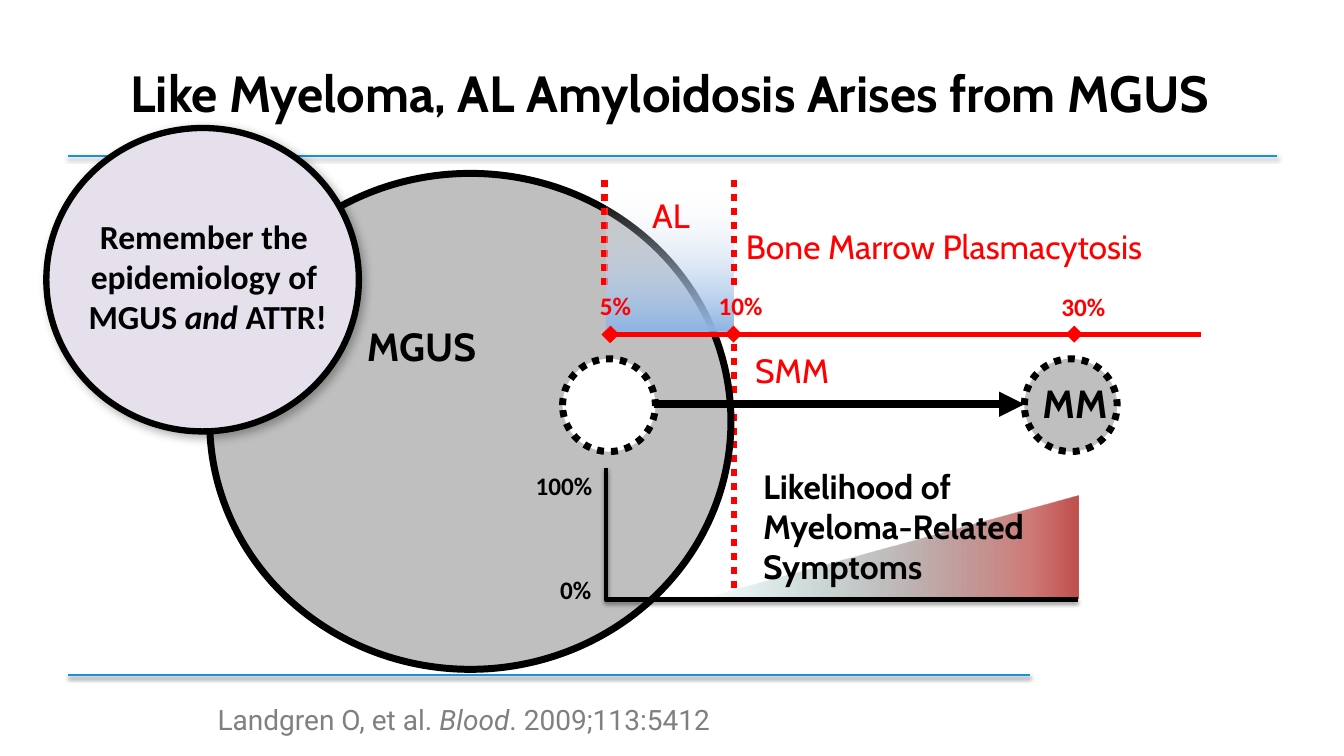
from dataclasses import dataclass
from typing import Optional

import pptx
import pptx.dml.color
import pptx.enum.dml
import pptx.enum.shapes
import pptx.enum.text
import pptx.oxml
import pptx.oxml.ns
import pptx.util

Inches, Pt = pptx.util.Inches, pptx.util.Pt
RGB = pptx.dml.color.RGBColor
Kind = pptx.enum.shapes.MSO_SHAPE
Align = pptx.enum.text.PP_ALIGN
Anchor = pptx.enum.text.MSO_ANCHOR
NS = pptx.oxml.ns.nsdecls("a")

BLACK = RGB(0, 0, 0)
WHITE = RGB(255, 255, 255)
RED = RGB(255, 0, 0)
GRAY = RGB(0xBF, 0xBF, 0xBF)
DIM = RGB(0x80, 0x80, 0x80)
BLUE = RGB(0x17, 0x92, 0xDD)
LILAC = RGB(0xE6, 0xE0, 0xEC)
TEAL = RGB(0, 0x80, 0x80)
BRICK = RGB(0xC0, 0x50, 0x4D)
PALE = RGB(0xF6, 0xF9, 0xFC)
SKY = RGB(0x8E, 0xB4, 0xE3)

HEAD = {"name": "Cabin", "size": Pt(28), "bold": True, "color": BLACK}
TITLE = HEAD | {"size": Pt(36.3)}
NOTE = HEAD | {"size": Pt(24)}
STAGE = NOTE | {"bold": False, "color": RED}
TICK = {"name": "Calibri", "size": Pt(18), "bold": True, "color": RED}
SCALE = TICK | {"color": BLACK}
CALL = SCALE | {"size": Pt(24)}
CITE = {"name": "Roboto", "size": Pt(20), "color": DIM}


@dataclass
class Shade:
    """Shadow: opacity in percent, blur and distance in points, angle."""
    alpha: int
    blur: float
    dist: float
    angle: int


@dataclass
class Line:
    x1: float
    y1: float
    x2: float
    y2: float
    color: RGB
    width: float
    dots: bool = False
    ends: tuple = ()
    shade: Optional[Shade] = None


@dataclass
class Form:
    kind: Kind
    x: float
    y: float
    w: float
    h: float
    fill: Optional[RGB] = None
    line: float = 0
    dots: bool = False
    shade: Optional[Shade] = None
    stops: tuple = ()
    angle: int = 0
    flip: bool = False


@dataclass
class Label:
    """Text lines; a part between asterisks is italic."""
    text: str
    x: float
    y: float
    w: float
    h: float
    font: dict
    align: Align = Align.LEFT
    wrap: bool = False
    anchor: Anchor = Anchor.TOP


SOFT = Shade(38, 3.1, 1.6, 90)
DEEP = Shade(29, 7, 3, 45)


def cast(shape, shade: Optional[Shade]) -> None:
    """Replace the theme shadow by the given one, or by none."""
    inner = ""
    if shade:
        inner = (f'<a:outerShdw blurRad="{Pt(shade.blur)}" dist="{Pt(shade.dist)}" '
                 f'dir="{shade.angle * 60000}" rotWithShape="0"><a:srgbClr val="000000">'
                 f'<a:alpha val="{shade.alpha * 1000}"/></a:srgbClr></a:outerShdw>')
    shape._element.spPr.append(
        pptx.oxml.parse_xml(f"<a:effectLst {NS}>{inner}</a:effectLst>"))


def stroke(line, color: RGB, width: float, dots: bool) -> None:
    line.color.rgb = color
    line.width = Pt(width)
    if dots:
        line.dash_style = pptx.enum.dml.MSO_LINE.ROUND_DOT


def blend(shape, stops: tuple, angle: int) -> None:
    """Put a gradient of (place, colour, opacity) stops in place of the fill."""
    inner = "".join(
        f'<a:gs pos="{place * 1000}"><a:srgbClr val="{color}">'
        f'<a:alpha val="{alpha * 1000}"/></a:srgbClr></a:gs>'
        for place, color, alpha in stops)
    grad = pptx.oxml.parse_xml(
        f'<a:gradFill {NS} rotWithShape="1"><a:gsLst>{inner}</a:gsLst>'
        f'<a:lin ang="{angle * 60000}" scaled="0"/></a:gradFill>')
    props = shape._element.spPr
    props.replace(props.find(pptx.oxml.ns.qn("a:solidFill")), grad)


def add_line(slide, item: Line) -> None:
    link = slide.shapes.add_connector(
        pptx.enum.shapes.MSO_CONNECTOR.STRAIGHT,
        *map(Inches, (item.x1, item.y1, item.x2, item.y2)))
    stroke(link.line, item.color, item.width, item.dots)
    for tag, kind in item.ends:
        link.line._ln.append(pptx.oxml.parse_xml(f'<a:{tag} {NS} type="{kind}"/>'))
    cast(link, item.shade)


def add_form(slide, item: Form) -> None:
    shape = slide.shapes.add_shape(
        item.kind, *map(Inches, (item.x, item.y, item.w, item.h)))
    shape.fill.solid()
    shape.fill.fore_color.rgb = item.fill or WHITE
    if item.stops:
        blend(shape, item.stops, item.angle)
    if item.flip:
        shape._element.spPr.xfrm.set("flipH", "1")
    if item.line:
        stroke(shape.line, BLACK, item.line, item.dots)
    else:
        shape.line.fill.background()
    cast(shape, item.shade)


def add_label(slide, item: Label) -> None:
    box = slide.shapes.add_textbox(*map(Inches, (item.x, item.y, item.w, item.h)))
    frame = box.text_frame
    frame.word_wrap = item.wrap
    frame.vertical_anchor = item.anchor
    for i, row in enumerate(item.text.split("\n")):
        para = frame.add_paragraph() if i else frame.paragraphs[0]
        para.alignment = item.align
        for j, part in enumerate(row.split("*")):
            run = para.add_run()
            run.text = part
            for key, value in item.font.items():
                if key == "color":
                    run.font.color.rgb = value
                else:
                    setattr(run.font, key, value)
            run.font.italic = j % 2 == 1


def add_axes(slide) -> None:
    pen = slide.shapes.build_freeform(Inches(6.01), Inches(4.64))
    pen.add_line_segments([(Inches(6.01), Inches(5.95)),
                           (Inches(10.69), Inches(5.95))], close=False)
    axes = pen.convert_to_shape()
    axes.fill.background()
    stroke(axes.line, BLACK, 3.5, False)
    cast(axes, SOFT)


def gem(x: float) -> Form:
    """Diamond mark on the red scale."""
    return Form(Kind.DIAMOND, x, 3.23, 0.17, 0.17, RED)


BACK = [
    Line(0.67, 1.55, 12.67, 1.55, BLUE, 1.5, shade=SOFT),
    Line(0.67, 6.7, 10.22, 6.7, BLUE, 1.5, shade=SOFT),
    Line(7.28, 3.41, 7.28, 5.88, RED, 5, True),
    Form(Kind.OVAL, 2.08, 1.72, 5.17, 4.92, GRAY, 5),
    Label("MGUS", 3.54, 3.15, 2.21, 0.57, HEAD, wrap=True),
    Label("Landgren O, et al. *Blood*. 2009;113:5412", 2.06, 6.91, 5.34, 0.44,
          CITE, wrap=True, anchor=Anchor.BOTTOM),
    Line(6.05, 3.32, 11.91, 3.32, RED, 4, ends=(("headEnd", "diamond"),)),
    gem(10.57),
    Label("30%", 10.43, 2.84, 0.64, 0.4, TICK),
    Form(Kind.OVAL, 5.58, 3.56, 0.92, 0.92, WHITE, 5, True),
    Form(Kind.OVAL, 10.16, 3.56, 0.92, 0.92, GRAY, 5, True),
    Label("MM", 10.24, 3.71, 1, 0.57, HEAD, wrap=True),
    Line(6.49, 4.01, 10.16, 4.01, BLACK, 6, ends=(("tailEnd", "triangle"),)),
    Label("Bone Marrow Plasmacytosis", 7.3, 2.19, 4.45, 0.5, STAGE),
    Form(Kind.RIGHT_TRIANGLE, 6.94, 4.92, 3.76, 1.02, flip=True, angle=180,
         stops=((0, TEAL, 0), (87, BRICK, 75), (100, BRICK, 100))),
]
FRONT = [
    Label("100%", 5.21, 4.62, 0.77, 0.4, SCALE, Align.CENTER),
    Label("0%", 5.3, 5.65, 0.82, 0.4, SCALE, Align.CENTER, True),
    Label("Likelihood of Myeloma-Related Symptoms", 7.47, 4.57, 3.11, 1.31,
          NOTE, wrap=True),
    Label("SMM", 7.39, 3.42, 0.99, 0.5, STAGE),
    Line(6, 1.79, 6, 2.89, RED, 5, True),
    Form(Kind.RECTANGLE, 6.02, 1.76, 1.26, 1.53, angle=90,
         stops=((9, PALE, 0), (100, SKY, 100))),
    gem(7.19),
    Label("5%", 5.85, 2.83, 0.51, 0.4, TICK),
    Label("10%", 7.03, 2.83, 0.64, 0.4, TICK),
    Line(7.28, 1.79, 7.28, 2.89, RED, 5, True),
    gem(5.97),
    Label("AL", 6.37, 1.88, 0.61, 0.5, STAGE),
    Label("Like Myeloma, AL Amyloidosis Arises from MGUS", 0.6, 0.52, 12.1, 0.78,
          TITLE, Align.CENTER, True, Anchor.MIDDLE),
    Form(Kind.OVAL, 0.46, 1.27, 3.1, 3.01, LILAC, 4.5, shade=DEEP),
    Label("Remember the \nepidemiology of \nMGUS *and* ATTR!", 0.77, 2.09, 2.58, 1.31,
          CALL, Align.CENTER),
]
DRAW = {Line: add_line, Form: add_form, Label: add_label}


def main() -> None:
    deck = pptx.Presentation()
    deck.slide_width, deck.slide_height = Inches(13.33), Inches(7.5)
    slide = deck.slides.add_slide(deck.slide_layouts[6])
    for item in BACK:
        DRAW[type(item)](slide, item)
    add_axes(slide)
    for item in FRONT:
        DRAW[type(item)](slide, item)
    deck.save("out.pptx")


if __name__ == "__main__":
    main()
